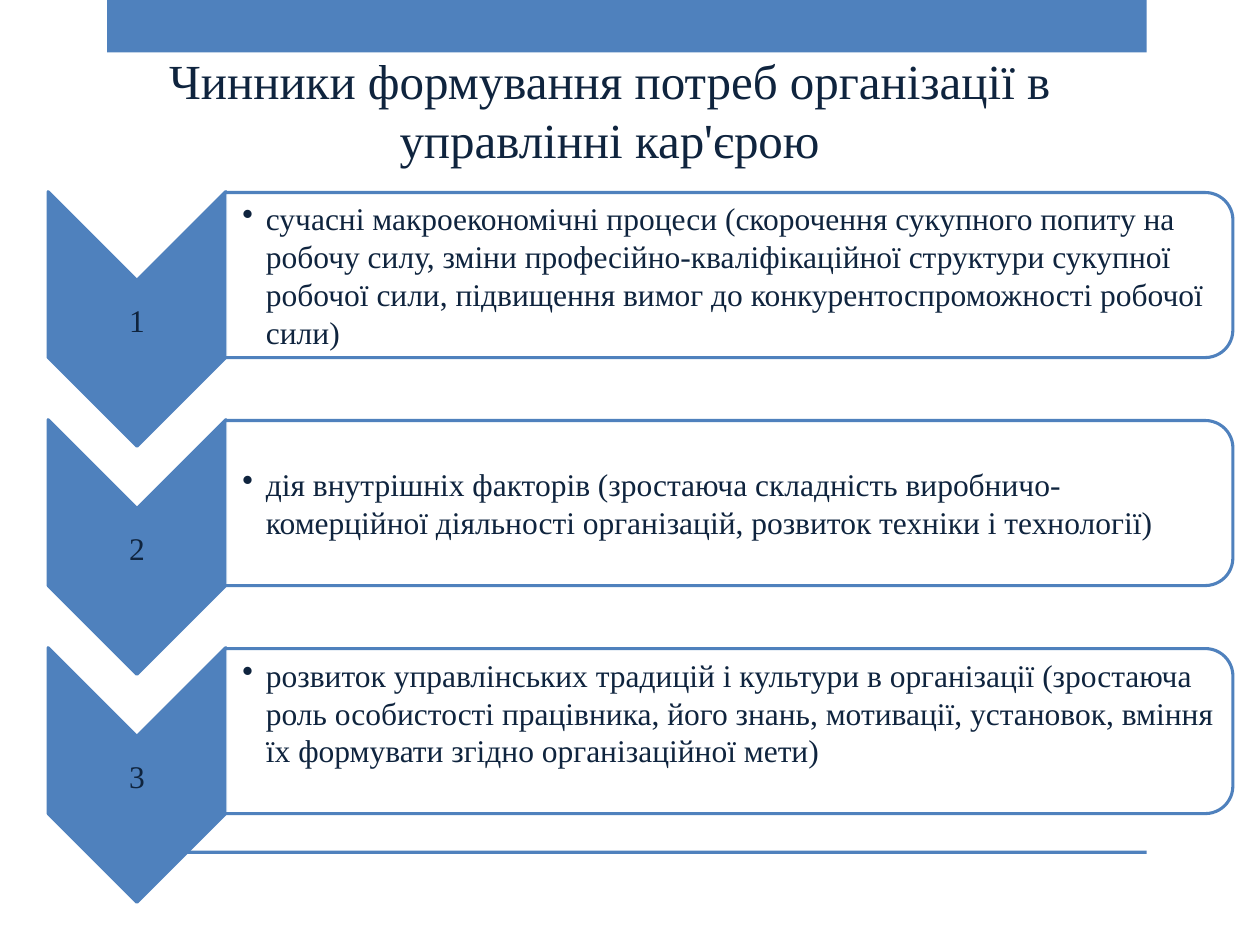
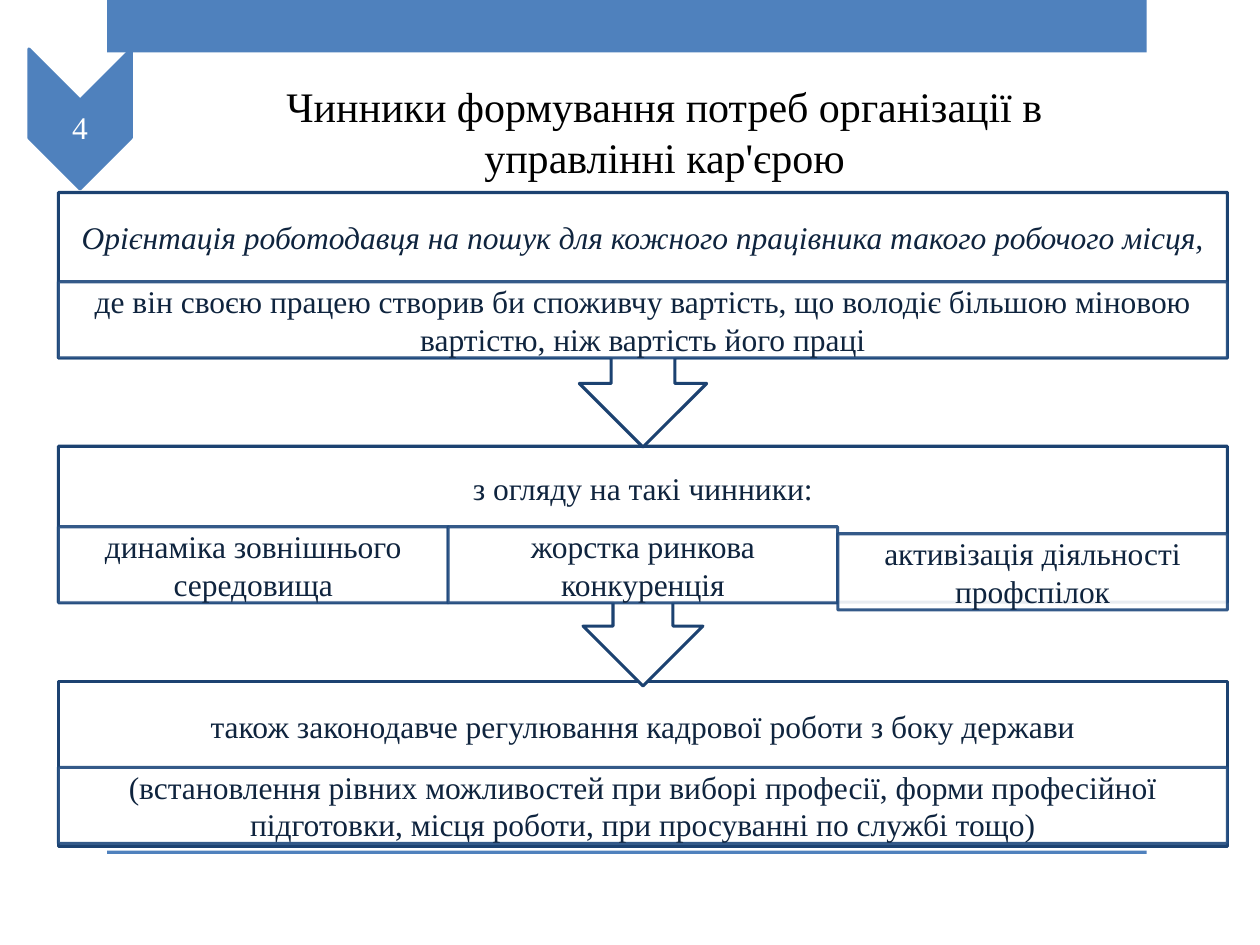
"""Build two slides on the factors behind an organisation's career management needs."""
from collections import namedtuple
from dataclasses import dataclass

from lxml import etree
from pptx import Presentation
from pptx.dml.color import RGBColor
from pptx.enum.shapes import MSO_SHAPE
from pptx.enum.text import MSO_ANCHOR, MSO_AUTO_SIZE, PP_ALIGN
from pptx.oxml.ns import qn
from pptx.util import Pt

RECTANGLE = MSO_SHAPE.RECTANGLE
CHEVRON = MSO_SHAPE.CHEVRON
ROUNDED_TOP = MSO_SHAPE.ROUND_2_SAME_RECTANGLE
ARROW_CALLOUT = MSO_SHAPE.UP_ARROW_CALLOUT
TOP, MIDDLE = MSO_ANCHOR.TOP, MSO_ANCHOR.MIDDLE
CENTER, LEFT = PP_ALIGN.CENTER, PP_ALIGN.LEFT
NO_FIT = MSO_AUTO_SIZE.NONE
TITLE_ONLY = 5

Box = namedtuple("Box", "left top width height")
Block = namedtuple("Block", "box shape rotation heading heading_height italic detail_top details")


@dataclass(frozen=True)
class Theme:
    """Colours, font and sizes shared by the slides."""
    accent: str = "4F81BD"
    outline: str = "1C4271"
    detail_outline: str = "1F497D"
    ink: str = "0F243E"
    black: str = "000000"
    white: str = "FFFFFF"
    font: str = "Times New Roman"
    body_size: int = 18
    line_width: float = 1.75
    opacity: int = 90


THEME = Theme()
TITLE = "Чинники формування потреб організації в управлінні кар'єрою"

FACTORS = [
    "сучасні макроекономічні процеси (скорочення сукупного попиту на робочу силу, "
    "зміни професійно-кваліфікаційної структури сукупної робочої сили, підвищення "
    "вимог до конкурентоспроможності робочої сили)",
    "дія внутрішніх факторів (зростаюча складність виробничо-комерційної діяльності "
    "організацій, розвиток техніки і технології)",
    "розвиток управлінських традицій і культури в організації (зростаюча роль "
    "особистості працівника, його знань, мотивації, установок, вміння їх формувати "
    "згідно організаційної мети)",
]
FACTOR_BOTTOM_INSETS = [1, 1, 22]

BLOCKS = [
    Block(Box(33.4, 110, 668, 145.5), ARROW_CALLOUT, 180,
          "Орієнтація роботодавця на пошук для кожного працівника такого робочого місця,",
          51, True, 51,
          ["де він своєю працею створив би споживчу вартість, що володіє більшою "
           "міновою вартістю, ніж вартість його праці"]),
    Block(Box(33.4, 255, 668, 137), ARROW_CALLOUT, 180,
          "з огляду на такі чинники:", 48, False, 46,
          ["динаміка зовнішнього середовища", "жорстка ринкова конкуренція",
           "активізація діяльності профспілок"]),
    Block(Box(33.4, 389.5, 668, 94.5), RECTANGLE, 0,
          "також законодавче регулювання кадрової роботи з боку держави",
          51, False, 49,
          ["(встановлення рівних можливостей при виборі професії, форми професійної "
           "підготовки, місця роботи, при просуванні по службі тощо)"]),
]


def points(values):
    """Convert numbers to point lengths."""
    return [Pt(value) for value in values]


def add_panel(page, kind, box, fill, line=None, rotation=0, fill_opacity=100, line_opacity=100):
    """Draw a preset shape that covers the box once it has been rotated."""
    left, top, width, height = box
    if rotation == 90:
        left, top = left + (width - height) / 2, top + (height - width) / 2
        width, height = height, width
    shape = page.shapes.add_shape(kind, *points((left, top, width, height)))
    shape.rotation = rotation
    shape.shadow.inherit = False
    shape.fill.solid()
    shape.fill.fore_color.rgb = RGBColor.from_string(fill)
    if line:
        shape.line.color.rgb = RGBColor.from_string(line)
        shape.line.width = Pt(THEME.line_width)
    else:
        shape.line.fill.background()
    colors = shape.element.spPr.iter(qn("a:srgbClr"))
    for color, opacity in zip(colors, (fill_opacity, line_opacity)):
        if opacity < 100:
            etree.SubElement(color, qn("a:alpha")).set("val", str(opacity * 1000))
    return shape


def write(frame, text, size, color, insets, anchor=MIDDLE, align=CENTER,
          italic=False, bullet_indent=0):
    """Fill a text frame with one formatted paragraph."""
    frame.word_wrap = True
    frame.auto_size = NO_FIT
    frame.vertical_anchor = anchor
    (frame.margin_left, frame.margin_top,
     frame.margin_right, frame.margin_bottom) = points(insets)
    para = frame.paragraphs[0]
    para.text = text
    para.alignment = align
    if bullet_indent:
        properties = para._p.get_or_add_pPr()
        properties.set("marL", str(Pt(bullet_indent)))
        properties.set("indent", str(-Pt(bullet_indent)))
        etree.SubElement(properties, qn("a:buChar")).set("char", "•")
    para.font.name = THEME.font
    para.font.size = Pt(size)
    para.font.italic = italic
    para.font.color.rgb = RGBColor.from_string(color)


def add_label(page, box, text, insets, color=THEME.ink, **options):
    """Place body text in a box."""
    label = page.shapes.add_textbox(*points(box))
    write(label.text_frame, text, THEME.body_size, color, insets, **options)


def set_title(page, box, size, color):
    """Move and format the title placeholder."""
    title = page.shapes.title
    title.left, title.top, title.width, title.height = points(box)
    write(title.text_frame, TITLE, size, color, (7.2, 3.6, 7.2, 3.6), anchor=TOP)


def add_master_bands(deck, page):
    """Draw the top band and bottom rule and move them to the master."""
    for box in (Box(61.2, 0, 594, 30), Box(61.2, 486, 594, 2)):
        band = add_panel(page, RECTANGLE, box, THEME.accent)
        deck.slide_master.shapes.element.append(band.element)


def add_numbered_chevron(page, box, number, color, drop):
    """Draw a downward chevron with its number slightly below the middle."""
    add_panel(page, CHEVRON, box, THEME.accent, THEME.accent, rotation=90)
    add_label(page, box._replace(top=box.top + drop), str(number), (1, 1, 1, 1), color)


def add_factor_row(page, box, number, text, bottom_inset):
    """Draw a chevron beside a rounded panel holding one bulleted factor."""
    chevron = Box(box.left, box.top, 101.5, box.height)
    add_numbered_chevron(page, chevron, number, THEME.ink, 0.7)
    panel = Box(box.left + 101, box.top + 0.5, box.width - 101, 94.3)
    add_panel(page, ROUNDED_TOP, panel, THEME.white, THEME.accent, rotation=90,
              fill_opacity=THEME.opacity)
    label = Box(panel.left, panel.top + 4.5, panel.width - 5, 85)
    add_label(page, label, text, (10, 1, 1, bottom_inset), align=LEFT, bullet_indent=13.5)


def add_block(page, block):
    """Draw a heading block with its equal-width detail cells."""
    box = block.box
    add_panel(page, block.shape, box, THEME.white, THEME.outline, rotation=block.rotation)
    add_label(page, box._replace(height=block.heading_height), block.heading,
              (10, 10, 10, 10), italic=block.italic)
    width = box.width / len(block.details)
    for column, text in enumerate(block.details):
        drop = 4 if column == 2 else 0
        cell = Box(box.left + column * width, box.top + block.detail_top + drop, width, 43.5)
        add_panel(page, RECTANGLE, cell, THEME.white, THEME.detail_outline,
                  fill_opacity=THEME.opacity, line_opacity=THEME.opacity)
        add_label(page, cell, text, (10, 2, 10, 2))


def build_factors_page(page):
    """Build the list of three numbered factors."""
    set_title(page, Box(74, 25.2, 548.6, 75), 28, THEME.ink)
    for index, (text, inset) in enumerate(zip(FACTORS, FACTOR_BOTTOM_INSETS)):
        row = Box(27.5, 109.5 + index * 130.3, 677, 145.5)
        add_factor_row(page, row, index + 1, text, inset)


def build_orientation_page(page):
    """Build the fourth factor as a chain of blocks."""
    set_title(page, Box(109.4, 42.5, 540.7, 65.5), 24, THEME.black)
    for block in reversed(BLOCKS):
        add_block(page, block)
    add_numbered_chevron(page, Box(16.5, 28, 58.5, 80), 4, THEME.white, 4.5)


def main():
    """Create and save the deck."""
    deck = Presentation()
    deck.slide_width, deck.slide_height = Pt(720), Pt(540)
    layout = deck.slide_layouts[TITLE_ONLY]
    factors_page, orientation_page = [deck.slides.add_slide(layout) for _ in range(2)]
    add_master_bands(deck, factors_page)
    build_factors_page(factors_page)
    build_orientation_page(orientation_page)
    deck.save("out.pptx")


if __name__ == "__main__":
    main()
